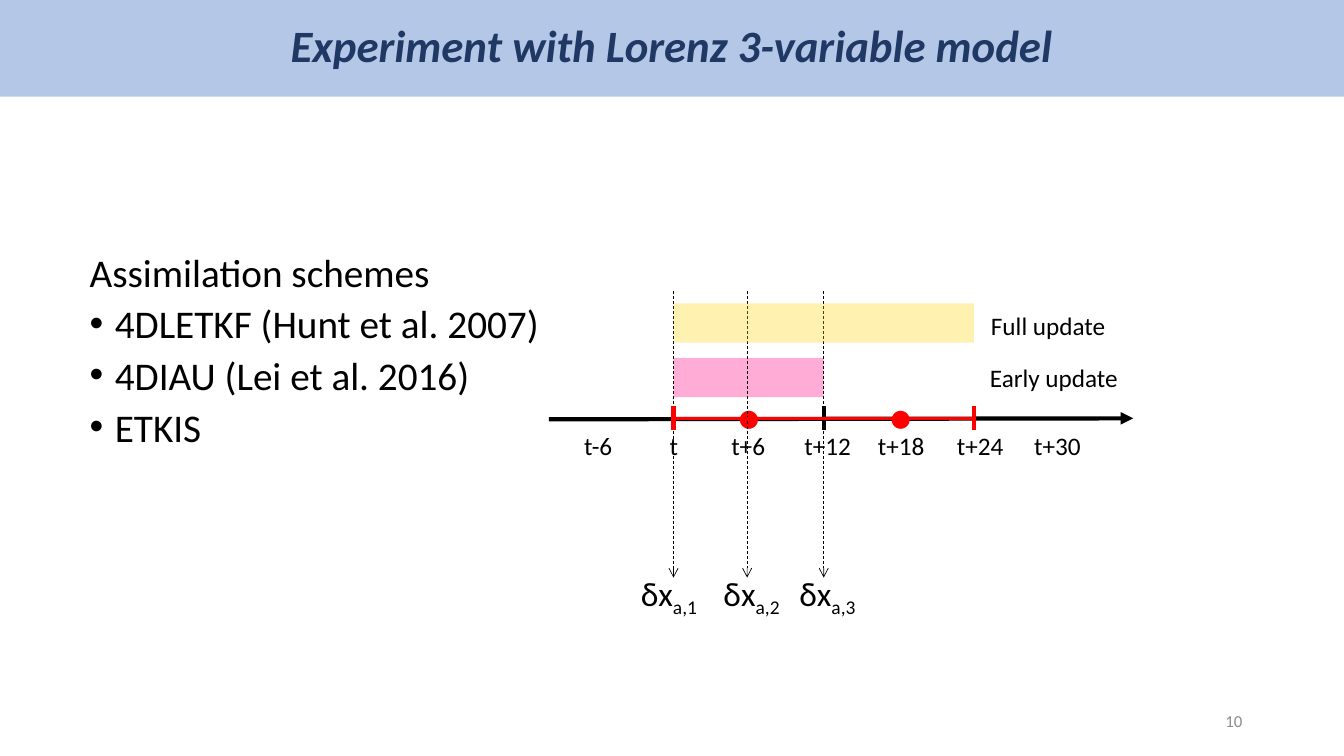
from typing import NamedTuple, Optional

from lxml.etree import SubElement
from pptx import Presentation
from pptx.dml.color import RGBColor
from pptx.enum.dml import MSO_LINE
from pptx.enum.shapes import MSO_CONNECTOR, MSO_SHAPE
from pptx.enum.text import MSO_ANCHOR, MSO_AUTO_SIZE, PP_ALIGN
from pptx.oxml.ns import qn
from pptx.util import Inches, Pt

BLACK = RGBColor(0x00, 0x00, 0x00)
RED = RGBColor(0xFF, 0x00, 0x00)
GRAY = RGBColor(0x8C, 0x8C, 0x8C)
NAVY = RGBColor(0x20, 0x38, 0x64)
LIGHT_BLUE = RGBColor(0xB4, 0xC7, 0xE7)
PINK = RGBColor(0xFF, 0xAD, 0xD6)
YELLOW = RGBColor(0xFF, 0xD4, 0x00)
FONT = "Calibri"

SLIDE_WIDTH, SLIDE_HEIGHT = Inches(13.33), Inches(7.5)
START_X, AXIS_Y = 6.68, 4.15
SIX_HOURS, ROW = 0.745, 0.1


class Label(NamedTuple):
    text: str
    center: float
    top: float
    width: float
    size: int = 18
    color: RGBColor = BLACK
    subscript: str = ""


class Line(NamedTuple):
    start: tuple[float, float]
    end: tuple[float, float]
    color: RGBColor = BLACK
    width: float = 3
    arrow: Optional[str] = None
    dashed: bool = False


class Window(NamedTuple):
    columns: float
    top: float
    color: RGBColor
    opacity: int = 100


def column_x(column: float) -> int:
    return Inches(START_X + SIX_HOURS * column)


def row_y(row: float) -> int:
    return Inches(AXIS_Y + ROW * row)


def share(left: float, top: float, width: float, height: float) -> tuple[int, ...]:
    return (int(SLIDE_WIDTH * left), int(SLIDE_HEIGHT * top),
            int(SLIDE_WIDTH * width), int(SLIDE_HEIGHT * height))


def format_font(font, size: int, color: RGBColor) -> None:
    font.name = FONT
    font.size = Pt(size)
    font.color.rgb = color


def draw_rectangle(slide, box: tuple[int, ...], color: RGBColor, opacity: int = 100):
    shape = slide.shapes.add_shape(MSO_SHAPE.RECTANGLE, *box)
    shape.shadow.inherit = False
    shape.fill.solid()
    shape.fill.fore_color.rgb = color
    shape.line.fill.background()
    if opacity < 100:
        fill_color = shape._element.spPr.find(qn("a:solidFill")).find(qn("a:srgbClr"))
        SubElement(fill_color, qn("a:alpha")).set("val", str(opacity * 1000))
    return shape


def draw_window(slide, window: Window) -> None:
    box = (column_x(0), row_y(window.top), Inches(SIX_HOURS * window.columns), Inches(0.39))
    draw_rectangle(slide, box, window.color, window.opacity)


def draw_line(slide, line: Line) -> None:
    connector = slide.shapes.add_connector(
        MSO_CONNECTOR.STRAIGHT, column_x(line.start[0]), row_y(line.start[1]),
        column_x(line.end[0]), row_y(line.end[1]))
    connector.line.color.rgb = line.color
    connector.line.width = Pt(line.width)
    if line.dashed:
        connector.line.dash_style = MSO_LINE.DASH
    if line.arrow:
        outline = connector.line._get_or_add_ln()
        SubElement(outline, qn("a:tailEnd")).set("type", line.arrow)
    SubElement(connector._element.spPr, qn("a:effectLst"))


def draw_label(slide, label: Label) -> None:
    width = Inches(label.width)
    height = Pt(label.size * 1.2) + Inches(0.1)
    text_box = slide.shapes.add_textbox(
        column_x(label.center) - width // 2, row_y(label.top), width, height)
    frame = text_box.text_frame
    frame.text = label.text
    frame.word_wrap = False
    frame.auto_size = MSO_AUTO_SIZE.SHAPE_TO_FIT_TEXT
    paragraph = frame.paragraphs[0]
    if label.subscript:
        run = paragraph.add_run()
        run.text = label.subscript
        run._r.get_or_add_rPr().set("baseline", "-25000")
    for run in paragraph.runs:
        format_font(run.font, label.size, label.color)


def draw_title(slide, text: str) -> None:
    shape = draw_rectangle(slide, share(0, 0, 1, 0.128), LIGHT_BLUE)
    shape.text_frame.text = text
    shape.text_frame.vertical_anchor = MSO_ANCHOR.MIDDLE
    paragraph = shape.text_frame.paragraphs[0]
    paragraph.alignment = PP_ALIGN.CENTER
    paragraph.line_spacing = 0.9
    font = paragraph.runs[0].font
    format_font(font, 32, NAVY)
    font.bold = font.italic = True


def draw_schemes(slide, heading: str, schemes: list[str]) -> None:
    text_box = slide.shapes.add_textbox(*share(0.0593, 0.3333, 0.8627, 0.2813))
    frame = text_box.text_frame
    frame.word_wrap = True
    frame.text = "\n".join([heading, *schemes])
    for index, paragraph in enumerate(frame.paragraphs):
        paragraph.line_spacing = 0.8
        if index:
            paragraph.space_before = Pt(10)
            properties = paragraph._p.get_or_add_pPr()
            properties.set("marL", str(Inches(0.25)))
            properties.set("indent", str(-Inches(0.25)))
            SubElement(properties, qn("a:buFont")).set("typeface", "Arial")
            SubElement(properties, qn("a:buChar")).set("char", "•")
        format_font(paragraph.runs[0].font, 28, BLACK)


def draw_page_number(slide, number: str) -> None:
    text_box = slide.shapes.add_textbox(*share(0.7067, 0.9267, 0.225, 0.0533))
    frame = text_box.text_frame
    frame.word_wrap = True
    frame.text = number
    frame.vertical_anchor = MSO_ANCHOR.MIDDLE
    frame.paragraphs[0].alignment = PP_ALIGN.RIGHT
    format_font(frame.paragraphs[0].runs[0].font, 12, GRAY)


def tick(column: float, color: RGBColor = BLACK) -> Line:
    return Line((column, -1.2), (column, 1.2), color)


AXIS = [Line((-1.66, 0.1), (6.12, 0), arrow="triangle"), *map(tick, (0, 2, 4))]
TIMES = [Label(text, center, 0.7, width) for text, center, width in (
    ("t", 0.01, 0.29), ("t+6", 1, 0.54), ("t+12", 2.06, 0.67), ("t+18", 3.04, 0.67),
    ("t+24", 4.09, 0.67), ("t-6", -1, 0.48), ("t+30", 5.12, 0.67))]
OBSERVATIONS = [Label("●", center, -3.1, 0.44, 28, RED) for center in (1.01, 3.03)]
EARLY_WINDOW = Window(2, -6, PINK)
FULL_WINDOW = Window(4, -11.4, YELLOW, 31)
WINDOW_NAMES = [Label("Early update", 5.08, -6, 1.49), Label("Full update", 5, -11.2, 1.35)]
INCREMENTS = [Label("δx", center, 14.8, 0.8, 24, subscript=f"a,{number}")
              for number, center in enumerate((-0.03, 1.07, 2.08), start=1)]
UPDATE_ARROWS = [Line((column, -12.6), (column, 15.8), width=0.5, arrow="arrow", dashed=True)
                 for column in (0, 0.98, 2)]
ASSIMILATION_SPAN = [tick(0, RED), tick(4, RED), Line((0, 0), (4, 0), RED, 2.25)]


def main() -> None:
    presentation = Presentation()
    presentation.slide_width, presentation.slide_height = SLIDE_WIDTH, SLIDE_HEIGHT
    slide = presentation.slides.add_slide(presentation.slide_layouts[6])
    draw_title(slide, "Experiment with Lorenz 3-variable model")
    for line in AXIS:
        draw_line(slide, line)
    for label in TIMES + OBSERVATIONS:
        draw_label(slide, label)
    draw_window(slide, EARLY_WINDOW)
    for label in WINDOW_NAMES + INCREMENTS:
        draw_label(slide, label)
    for line in UPDATE_ARROWS:
        draw_line(slide, line)
    draw_schemes(slide, "Assimilation schemes", [
        "4DLETKF (Hunt et al. 2007)", "4DIAU (Lei et al. 2016)", "ETKIS"])
    draw_window(slide, FULL_WINDOW)
    draw_page_number(slide, "10")
    for line in ASSIMILATION_SPAN:
        draw_line(slide, line)
    presentation.save("out.pptx")


if __name__ == "__main__":
    main()
